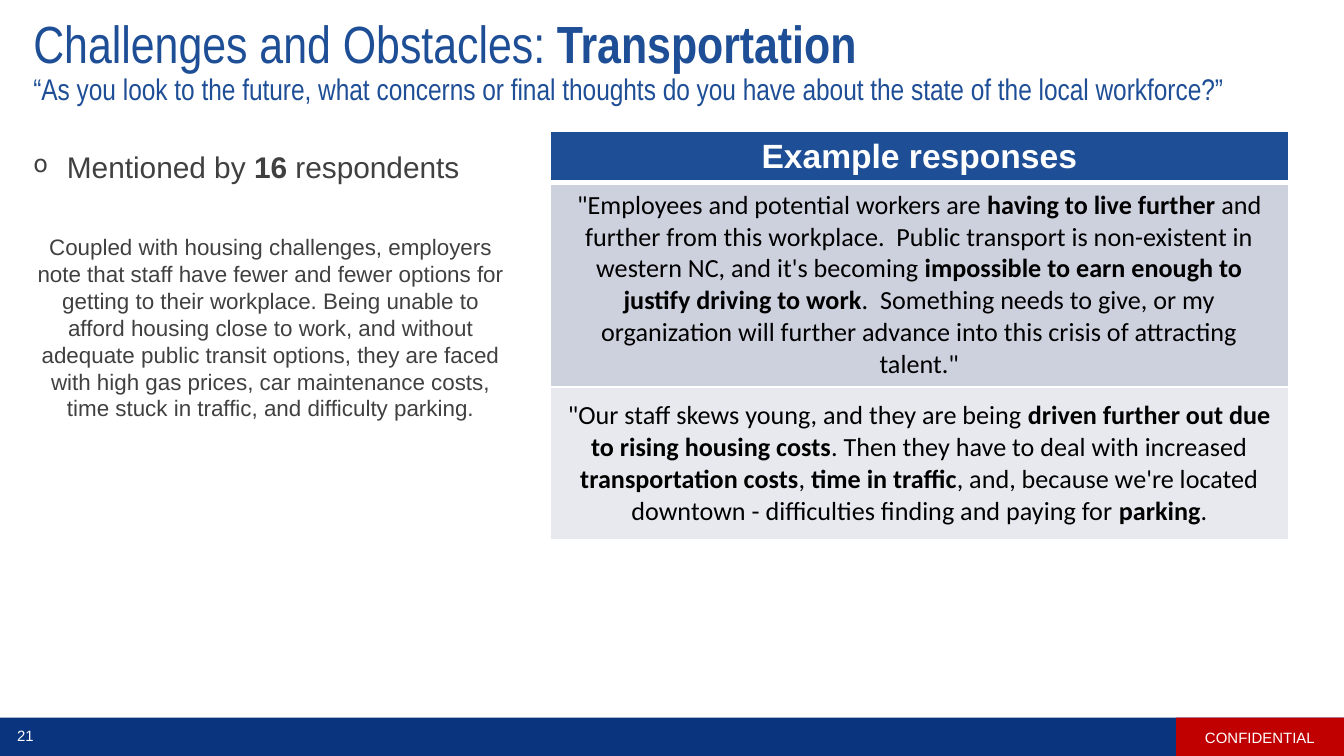
from pptx import Presentation
from pptx.dml.color import RGBColor
from pptx.enum import shapes, text
from pptx.oxml.ns import qn
from pptx.util import Inches, Pt
from lxml import etree

BLUE = RGBColor(0x1E, 0x4E, 0x96)
NAVY = RGBColor(0x0A, 0x35, 0x7E)
RED = RGBColor(0xC0, 0x00, 0x00)
WHITE = RGBColor(0xFF, 0xFF, 0xFF)
BLACK = RGBColor(0x00, 0x00, 0x00)
GREY = RGBColor(0x40, 0x40, 0x40)
BAND_DARK = RGBColor(0xCD, 0xD0, 0xDD)
BAND_LIGHT = RGBColor(0xE8, 0xE9, 0xEF)

# Content: ** switches bold on and off
TITLE = "Challenges and Obstacles: **Transportation**"
QUESTION = ("“As you look to the future, what concerns or final thoughts do you "
            "have about the state of the local workforce?”")
MENTIONS = "Mentioned by **16** respondents"
SUMMARY = ("Coupled with housing challenges, employers note that staff have fewer and "
           "fewer options for getting to their workplace. Being unable to afford housing "
           "close to work, and without adequate public transit options, they are faced "
           "with high gas prices, car maintenance costs, time stuck in traffic, and "
           "difficulty parking.")
HEADER = "**Example responses**"
RESPONSES = [
    "\"Employees and potential workers are **having to live further **and further from "
    "this workplace.  Public transport is non-existent in western NC, and it's becoming "
    "**impossible to earn enough to justify driving to work**.  Something needs to give, "
    "or my organization will further advance into this crisis of attracting talent.\"",
    "\"Our staff skews young, and they are being **driven further out due to rising "
    "housing costs**. Then they have to deal with increased **transportation costs**, "
    "**time in traffic**, and, because we're located downtown - difficulties finding and "
    "paying for **parking**.",
]
# Table rows: text, height, fill, size, font, colour, bottom border
ROWS = [
    (HEADER, 0.38, BLUE, 18, "Arial", WHITE, 3),
    (RESPONSES[0], 1.52, BAND_DARK, 14, "Calibri", BLACK, 1),
    (RESPONSES[1], 1.14, BAND_LIGHT, 14, "Calibri", BLACK, 1),
]

prs = Presentation()
prs.slide_width = Inches(10)
prs.slide_height = prs.slide_width * 9 // 16
slide = prs.slides.add_slide(prs.slide_layouts[6])


def write(frame, copy, size, color, font="Arial", align=text.PP_ALIGN.CENTER,
          before=0, spacing=None, same_paragraph=False):
    """Fill the first paragraph, add one, or go on after a line break."""
    if same_paragraph:
        para = frame.paragraphs[-1]
        para.add_line_break()
    else:
        para = frame.add_paragraph() if frame.text else frame.paragraphs[0]
    para.alignment, para.space_before = align, Pt(before)
    if spacing:
        para.line_spacing = spacing
    for i, part in enumerate(copy.split("**")):
        if part:
            run = para.add_run()
            run.text = part
            run.font.size, run.font.name = Pt(size), font
            run.font.bold = i % 2 == 1
            run.font.color.rgb = color
    return para


def text_box(left, top, width, height, anchor):
    frame = slide.shapes.add_textbox(*map(Inches, (left, top, width, height))).text_frame
    frame.word_wrap, frame.vertical_anchor = True, anchor
    return frame


def bar(left, width, fill):
    shape = slide.shapes.add_shape(shapes.MSO_SHAPE.RECTANGLE, Inches(left), Inches(5.34),
                                   Inches(width), Inches(0.29))
    shape.shadow.inherit = False
    shape.fill.solid()
    shape.fill.fore_color.rgb = fill
    shape.line.fill.background()
    shape.text_frame.vertical_anchor = text.MSO_ANCHOR.MIDDLE
    return shape.text_frame


def white_borders(cell, bottom):
    props = cell._tc.get_or_add_tcPr()
    for i, (side, width) in enumerate([("L", 1), ("R", 1), ("T", 1), ("B", bottom)]):
        line = etree.Element(qn(f"a:ln{side}"), w=str(Pt(width)))
        fill = etree.SubElement(line, qn("a:solidFill"))
        etree.SubElement(fill, qn("a:srgbClr"), val=str(WHITE))
        props.insert(i, line)


# Footer
bar(0, 10, NAVY)
write(bar(8.75, 1.25, RED), "CONFIDENTIAL", 8, WHITE)
write(text_box(0, 5.35, 0.38, 0.24, text.MSO_ANCHOR.MIDDLE), "21", 8, WHITE)

# Title and survey question
heading = text_box(0.15, 0.15, 9.67, 0.63, text.MSO_ANCHOR.MIDDLE)
heading.margin_left = heading.margin_top = heading.margin_bottom = Inches(0.1)
heading.margin_right = Inches(0.2)
for line, size in [(TITLE, 28), (QUESTION, 16)]:
    write(heading, line, size, BLUE, "Arial Narrow", text.PP_ALIGN.LEFT, spacing=0.9,
          same_paragraph=line == QUESTION)
# The break takes the size of the title line
line_break = heading.paragraphs[0]._p.find(qn("a:br"))
etree.SubElement(line_break, qn("a:rPr"), sz="2800")

# Mentions bullet and summary
body = text_box(0.15, 1.06, 3.73, 2.7, text.MSO_ANCHOR.TOP)
bullet = write(body, MENTIONS, 16, GREY, align=text.PP_ALIGN.LEFT)
bullet_props = bullet._p.get_or_add_pPr()
bullet_props.set("marL", str(Inches(0.25)))
bullet_props.set("indent", str(Inches(-0.25)))
etree.SubElement(bullet_props, qn("a:buSzPct"), val="80000")
etree.SubElement(bullet_props, qn("a:buChar"), char="o")
write(body, SUMMARY, 12, GREY, before=26)

# Example responses
table = slide.shapes.add_table(len(ROWS), 1, Inches(4.09), Inches(0.98), Inches(5.5),
                               Inches(sum(row[1] for row in ROWS))).table
for i, (copy, height, fill, size, font, color, bottom) in enumerate(ROWS):
    table.rows[i].height = Inches(height)
    cell = table.cell(i, 0)
    cell.vertical_anchor = text.MSO_ANCHOR.MIDDLE
    cell.margin_top = cell.margin_bottom = Inches(0.04)
    cell.fill.solid()
    cell.fill.fore_color.rgb = fill
    white_borders(cell, bottom)
    write(cell.text_frame, copy, size, color, font)

prs.save("out.pptx")
